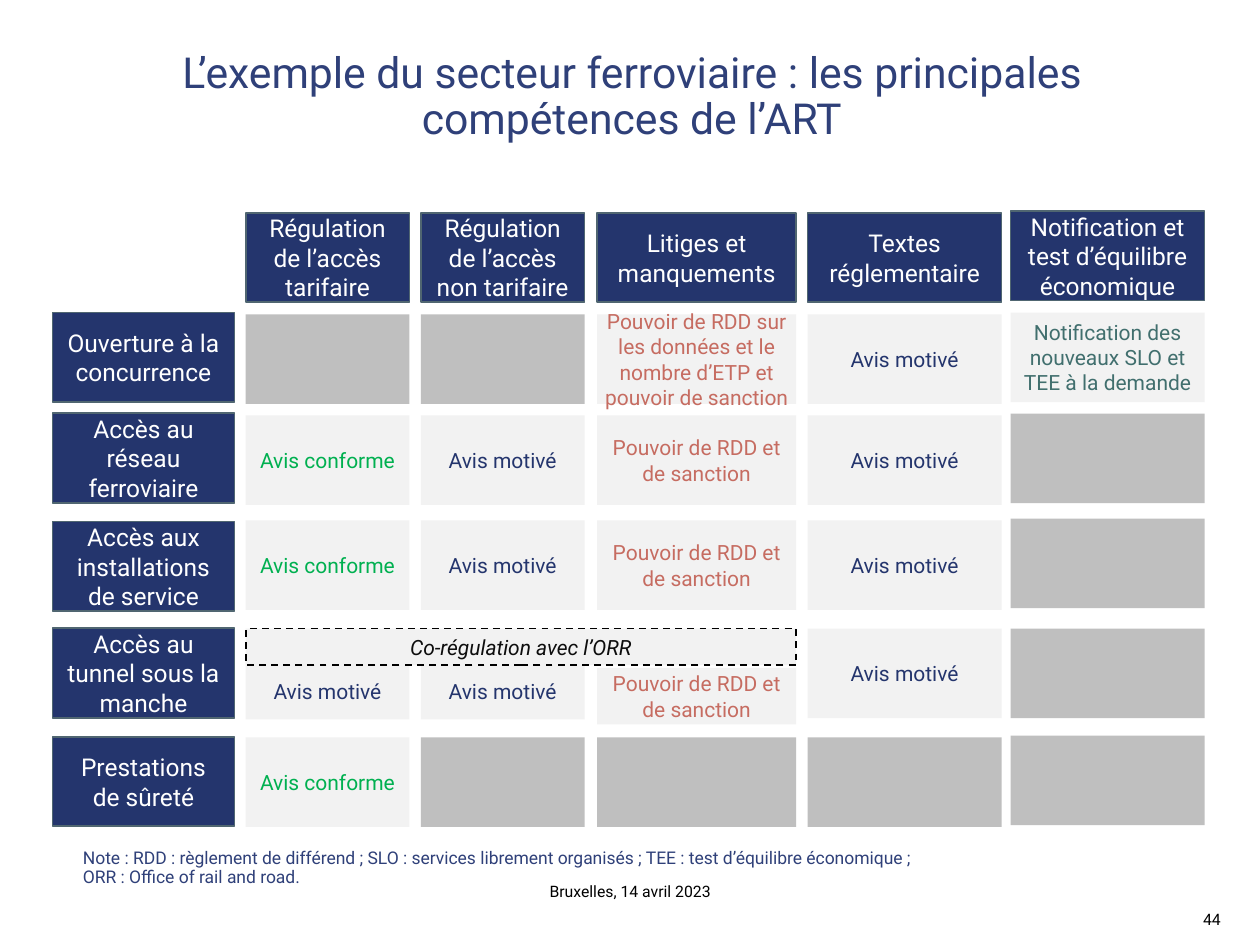
"""Build the slide on the regulator's main powers in the rail sector."""
import pptx
import pptx.util
import pptx.dml.color
import pptx.enum.dml
import pptx.enum.shapes
import pptx.enum.text

Pt = pptx.util.Pt
RGBColor = pptx.dml.color.RGBColor
PP_ALIGN = pptx.enum.text.PP_ALIGN
ANCHOR = pptx.enum.text.MSO_ANCHOR

NAVY = RGBColor(0x24, 0x35, 0x6D)
SLATE = RGBColor(0x50, 0x66, 0x71)
TITLE_BLUE = RGBColor(0x2F, 0x40, 0x79)
WHITE = RGBColor(0xFF, 0xFF, 0xFF)
BLACK = RGBColor(0, 0, 0)
INK = RGBColor(0x0D, 0x0D, 0x0D)
PALE = RGBColor(0xF2, 0xF2, 0xF2)
GREY = RGBColor(0xBF, 0xBF, 0xBF)
GREEN = RGBColor(0x00, 0xB0, 0x50)
RED = RGBColor(0xC6, 0x6C, 0x61)
TEAL = RGBColor(0x41, 0x6F, 0x6E)


def write(frame, lines, size, color, align, anchor, spacing=None):
    frame.word_wrap = True
    frame.vertical_anchor = anchor
    frame.text = "\n".join(lines)
    for paragraph in frame.paragraphs:
        paragraph.alignment = align
        paragraph.line_spacing = spacing
        paragraph.font.name = "Roboto"
        paragraph.font.size = Pt(size)
        paragraph.font.color.rgb = color


def add_box(left, top, width, height, text, fill, size, color, border=None):
    box = slide.shapes.add_shape(pptx.enum.shapes.MSO_SHAPE.RECTANGLE,
                                 Pt(left), Pt(top), Pt(width), Pt(height))
    box.shadow.inherit = False
    box.fill.solid()
    box.fill.fore_color.rgb = fill
    if border is None:
        box.line.fill.background()
    else:
        box.line.color.rgb = border
        box.line.width = Pt(1)
    if text:
        write(box.text_frame, [text], size, color, PP_ALIGN.CENTER, ANCHOR.MIDDLE)
    return box


deck = pptx.Presentation()
deck.slide_width, deck.slide_height = Pt(720), Pt(540)
slide = deck.slides.add_slide(deck.slide_layouts[6])

ROW_HEIGHT = 51.2
HEADER_TOP = 121.6
LAST_COLUMN_RISE = 1
columns = [
    (140.4, 93.6, "Régulation de l’accès tarifaire"),
    (240.5, 93.6, "Régulation de l’accès non tarifaire"),
    (341.2, 113.8, "Litiges et manquements"),
    (461.5, 110.9, "Textes réglementaire"),
    (577.5, 110.9, "Notification et test d’équilibre économique"),
]
conforme = ("Avis conforme", GREEN)
motive = ("Avis motivé", NAVY)
sanction = ("Pouvoir de RDD et de sanction", RED)
donnees = ("Pouvoir de RDD sur les données et le nombre d’ETP et pouvoir de sanction", RED)
notification = ("Notification des nouveaux SLO et TEE à la demande", TEAL)
rows = [
    (178.6, 179.6, "Ouverture à la concurrence", [None, None, donnees, motive, notification]),
    (236.2, 237.4, "Accès au réseau ferroviaire", [conforme, motive, sanction, motive, None]),
    (298, 297.4, "Accès aux installations de service", [conforme, motive, sanction, motive, None]),
    (359, 359.2, "Accès au tunnel sous la manche", [motive, motive, sanction, motive, None]),
    (421, 421.4, "Prestations de sûreté", [conforme, None, None, None, None]),
]
TUNNEL = 3
shared_tops = [378.7, 378.7, 381.6]

for column, (left, width, heading) in enumerate(columns):
    rise = LAST_COLUMN_RISE if column == 4 else 0
    add_box(left, HEADER_TOP - rise, width, ROW_HEIGHT, heading, NAVY, 14, WHITE, SLATE)

for row, (label_top, cell_top, label, powers) in enumerate(rows):
    add_box(30, label_top, 104, ROW_HEIGHT, label, NAVY, 14, WHITE, SLATE)
    for column, ((left, width, heading), power) in enumerate(zip(columns, powers)):
        top, height = cell_top, ROW_HEIGHT
        if row == TUNNEL and column < len(shared_tops):
            top, height = shared_tops[column], 32.4
        elif row != TUNNEL and column == 4:
            top -= LAST_COLUMN_RISE
        text, color = power or ("", NAVY)
        cell = add_box(left, top, width, height, text, PALE if power else GREY, 12, color)
        if power is donnees:
            frame = cell.text_frame
            frame.margin_left = frame.margin_right = Pt(0)
            frame.margin_top = frame.margin_bottom = Pt(0)

coregulation = add_box(140.4, 359.2, 314.6, 20.9, "Co-régulation avec l’ORR",
                       PALE, 12, INK, BLACK)
coregulation.line.dash_style = pptx.enum.dml.MSO_LINE.DASH
coregulation.text_frame.paragraphs[0].font.italic = True

captions = [
    (42.5, 26, 637, 72, ["L’exemple du secteur ferroviaire : les principales compétences de l’ART"],
     24.4, TITLE_BLUE, PP_ALIGN.CENTER, ANCHOR.TOP, 0.9),
    (40.3, 486, 528.5, 20.9,
     ["Note : RDD : règlement de différend ; SLO : services librement organisés ; "
      "TEE : test d’équilibre économique ;", "ORR : Office of rail and road."],
     10, TITLE_BLUE, PP_ALIGN.LEFT, ANCHOR.MIDDLE, 0.9),
    (238.3, 500.4, 243.4, 28.8, ["Bruxelles, 14 avril 2023"],
     9, BLACK, PP_ALIGN.CENTER, ANCHOR.TOP, None),
    (680.4, 516.2, 36, 18, ["44"], 9, BLACK, PP_ALIGN.LEFT, ANCHOR.TOP, None),
]
for left, top, width, height, *content in captions:
    caption = slide.shapes.add_textbox(Pt(left), Pt(top), Pt(width), Pt(height))
    write(caption.text_frame, *content)

deck.save("out.pptx")
